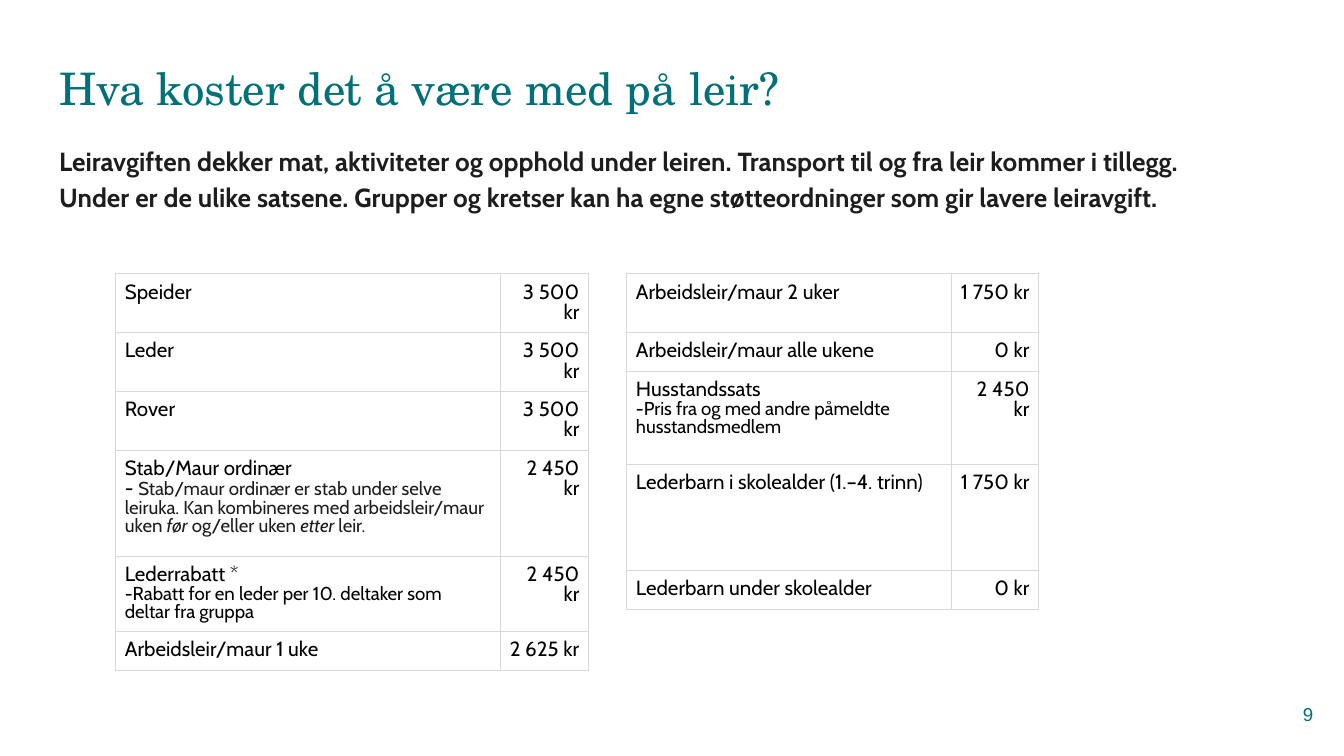
from dataclasses import dataclass

from lxml import etree
from pptx import Presentation
from pptx.dml.color import RGBColor
from pptx.enum import text as t
from pptx.oxml import ns
from pptx.util import Pt


@dataclass(frozen=True)
class Theme:
    teal: str = "007079"
    ink: str = "1D1D1D"
    black: str = "000000"
    border: str = "D9D9D9"
    heading: str = "TeX Gyre Schola"
    body: str = "Cabin"
    number: str = "Arial"
    title_size: float = 24
    intro_size: float = 14
    cell_size: float = 11
    note_size: float = 10
    number_size: float = 10


TH = Theme()
NOTE = dict(size=TH.note_size)
DARK = dict(size=TH.note_size, color=TH.ink)
ITALIC = dict(DARK, italic=True)
INTRO = (
    "Leiravgiften dekker mat, aktiviteter og opphold under leiren. "
    "Transport til og fra leir kommer i tillegg. Under er de ulike satsene. "
    "Grupper og kretser kan ha egne støtteordninger som gir lavere leiravgift."
)
STAFF = [[
    "Stab/Maur ordinær", "\n", "- ",
    ("Stab/maur ordinær er stab under selve leiruka. "
     "Kan kombineres med arbeidsleir/maur uken ", DARK),
    ("før ", ITALIC), ("og/eller uken ", DARK), ("etter ", ITALIC), ("leir.", DARK),
]]
DISCOUNT = [
    ["Lederrabatt *"],
    [("-Rabatt for en leder per 10. deltaker som deltar fra gruppa", NOTE)],
]
HOUSEHOLD = [
    ["Husstandssats"],
    [("-Pris fra og med andre påmeldte husstandsmedlem", NOTE)],
]
MAIN_RATES = [
    ([["Speider"]], "3 500 kr", 31.6),
    ([["Leder"]], "3 500 kr", 31.6),
    ([["Rover"]], "3 500 kr", 31.6),
    (STAFF, "2 450 kr", 56.8),
    (DISCOUNT, "2 450 kr", 40.2),
    ([["Arbeidsleir/maur 1 uke"]], "2 625 kr", 20.9),
]
OTHER_RATES = [
    ([["Arbeidsleir/maur 2 uker"]], "1 750 kr", 31.6),
    ([["Arbeidsleir/maur alle ukene"]], "0 kr", 20.9),
    (HOUSEHOLD, "2 450 kr", 49.8),
    ([["Lederbarn i skolealder (1.–4. trinn)"]], "1 750 kr", 56.8),
    ([["Lederbarn under skolealder"]], "0 kr", 20.9),
]


def format_run(r, size, font, color, bold=False, italic=False):
    r.font.size = Pt(size)
    r.font.name = font
    r.font.color.rgb = RGBColor.from_string(color)
    r.font.bold = bold
    r.font.italic = italic


def write(tf, paragraphs, align=t.PP_ALIGN.LEFT, spacing=1.0, after=0, **font):
    for i, parts in enumerate(paragraphs):
        p = tf.paragraphs[0] if i == 0 else tf.add_paragraph()
        p.alignment = align
        p.line_spacing = spacing
        p.space_before = Pt(0)
        p.space_after = Pt(after)
        for part in parts:
            if part == "\n":
                p.add_line_break()
                continue
            content, change = (part, {}) if isinstance(part, str) else part
            r = p.add_run()
            r.text = content
            format_run(r, **{**font, **change})


def place(sp, left, top, width, height, anchor):
    sp.left, sp.top, sp.width, sp.height = map(Pt, (left, top, width, height))
    tf = sp.text_frame
    tf.word_wrap = True
    tf.auto_size = t.MSO_AUTO_SIZE.NONE
    tf.vertical_anchor = anchor
    tf.margin_left = tf.margin_right = tf.margin_top = tf.margin_bottom = Pt(7.2)
    return tf


def remove_bullet(p):
    pPr = p._p.get_or_add_pPr()
    pPr.set("marL", "0")
    pPr.set("indent", "0")
    etree.SubElement(pPr, ns.qn("a:buNone"))


def border_cell(cell):
    tcPr = cell._tc.get_or_add_tcPr()
    for i, side in enumerate(("lnL", "lnR", "lnT", "lnB")):
        ln = etree.Element(ns.qn(f"a:{side}"), w=str(Pt(0.5)))
        fill = etree.SubElement(ln, ns.qn("a:solidFill"))
        etree.SubElement(fill, ns.qn("a:srgbClr"), val=TH.border)
        tcPr.insert(i, ln)


def add_cell(cell, paragraphs, align):
    cell.fill.background()
    cell.margin_left = cell.margin_right = Pt(5)
    cell.margin_top = cell.margin_bottom = Pt(5)
    write(cell.text_frame, paragraphs, align=align, spacing=0.8,
          size=TH.cell_size, font=TH.body, color=TH.black)
    border_cell(cell)


def add_rates(s, left, top, widths, rates):
    height = sum(row[2] for row in rates)
    frame = s.shapes.add_table(len(rates), 2, Pt(left), Pt(top),
                               Pt(sum(widths)), Pt(height))
    table = frame.table
    table.first_row = table.horz_banding = False
    for column, width in zip(table.columns, widths):
        column.width = Pt(width)
    for i, (label, price, row_height) in enumerate(rates):
        table.rows[i].height = Pt(row_height)
        add_cell(table.cell(i, 0), label, t.PP_ALIGN.LEFT)
        add_cell(table.cell(i, 1), [[price]], t.PP_ALIGN.RIGHT)


def main():
    prs = Presentation()
    prs.slide_width, prs.slide_height = Pt(720), Pt(405)
    s = prs.slides.add_slide(prs.slide_layouts[1])

    tf = place(s.shapes.title, 24.5, 8.6, 540.7, 59.8, t.MSO_ANCHOR.BOTTOM)
    write(tf, [["Hva koster det å være med på leir?"]],
          size=TH.title_size, font=TH.heading, color=TH.teal)

    tf = place(s.placeholders[1], 24.5, 68.4, 620.6, 78.5, t.MSO_ANCHOR.TOP)
    remove_bullet(tf.paragraphs[0])
    write(tf, [[INTRO]], spacing=1.15, after=12, size=TH.intro_size,
          font=TH.body, color=TH.ink, bold=True)

    add_rates(s, 61.9, 146.6, (206, 47.5), MAIN_RATES)
    add_rates(s, 335.7, 146.6, (174, 46.8), OTHER_RATES)

    number = s.shapes.add_textbox(0, 0, 0, 0)
    tf = place(number, 667.4, 367.2, 43.2, 31, t.MSO_ANCHOR.MIDDLE)
    write(tf, [["9"]], align=t.PP_ALIGN.RIGHT, size=TH.number_size,
          font=TH.number, color=TH.teal)

    prs.save("out.pptx")


if __name__ == "__main__":
    main()
